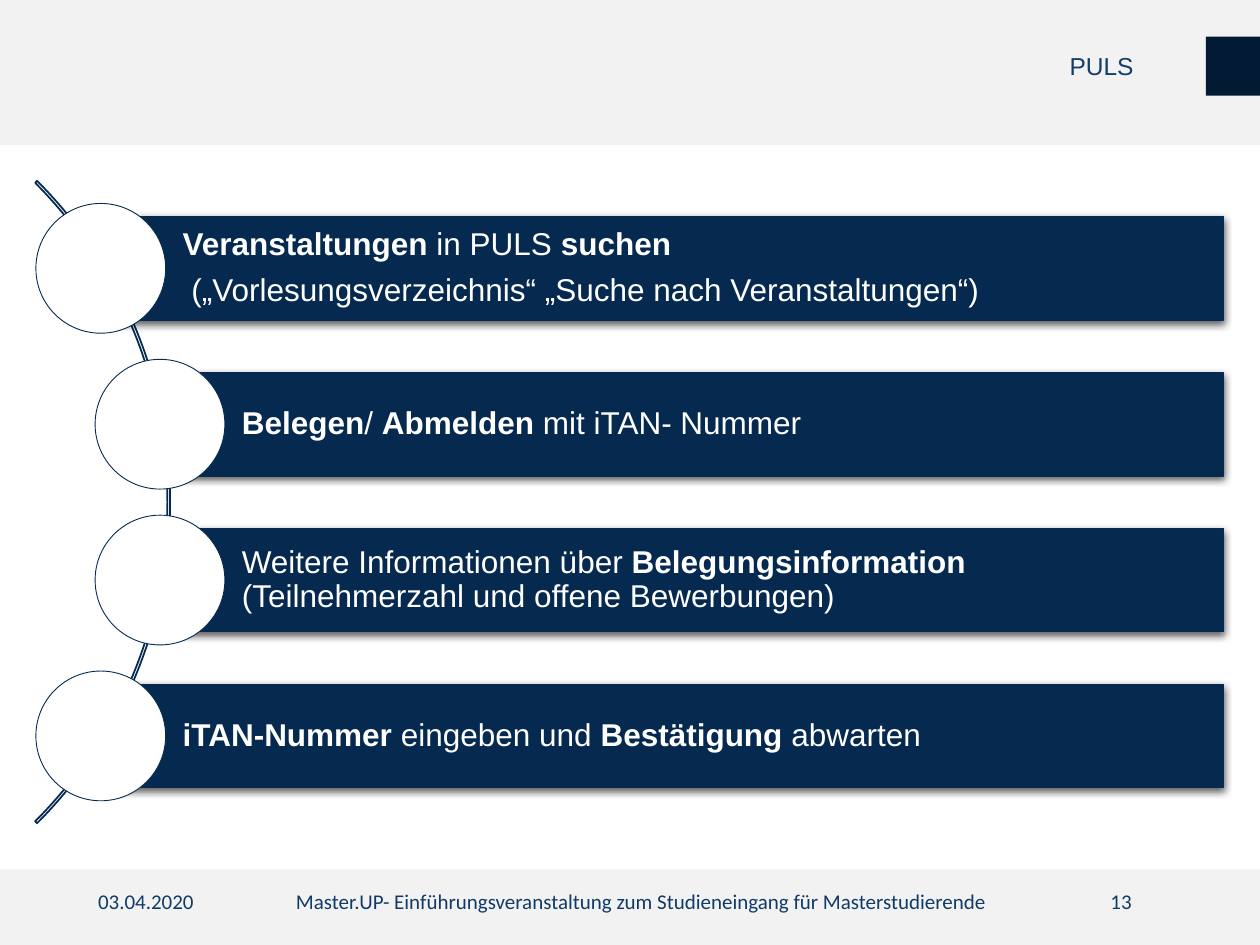
"""Builds the PULS slide: four enrolment steps strung along an arc."""
from lxml.etree import SubElement
from pptx import Presentation
from pptx.dml.color import RGBColor
from pptx.enum.shapes import MSO_SHAPE as Shape
from pptx.enum.text import MSO_ANCHOR as Anchor, PP_ALIGN as Align
from pptx.oxml.ns import qn
from pptx.util import Inches, Pt

COLORS = {
    "band": "F2F2F2", "navy": "05294F", "marker": "021A33", "white": "FFFFFF",
    "footer": "113B66", "title": "133E69", "shadow": "000000",
}
STEPS = [
    (0.8, [
        [("Veranstaltungen", True), (" in PULS ", False), ("suchen", True)],
        [(" („Vorlesungsverzeichnis“ „Suche nach Veranstaltungen“)", False)],
    ]),
    (1.27, [[("Belegen", True), ("/ ", False), ("Abmelden", True),
             (" mit iTAN- Nummer", False)]]),
    (1.27, [[("Weitere Informationen über ", False), ("Belegungsinformation ", True),
             ("\n", False), ("(Teilnehmerzahl und offene Bewerbungen)", False)]]),
    (0.8, [[("iTAN-Nummer", True), (" eingeben und ", False),
            ("Bestätigung", True), (" abwarten", False)]]),
]
FOOTER = [
    (0.68, 2.25, "03.04.2020", Align.LEFT),
    (2.25, 6.05, "Master.UP- Einführungsveranstaltung zum Studieneingang "
                 "für Masterstudierende", Align.LEFT),
    (6.83, 2.25, "13", Align.RIGHT),
]
BANDS = [(0, 1.15), (6.9, 0.6)]
FIRST_TOP, PITCH, BAR_HEIGHT, BAR_RIGHT, CIRCLE = 1.72, 1.237, 0.82, 9.71, 1.03


def color(name):
    return RGBColor.from_string(COLORS[name])


def add_figure(slide, preset, box, fill=None, line=None, width=0.75):
    figure = slide.shapes.add_shape(preset, *map(Inches, box))
    figure.shadow.inherit = False
    if fill:
        figure.fill.solid()
        figure.fill.fore_color.rgb = color(fill)
    else:
        figure.fill.background()
    if line:
        figure.line.color.rgb = color(line)
        figure.line.width = Pt(width)
    else:
        figure.line.fill.background()
    return figure


def cast_shadow(figure):
    effects = figure._element.spPr.find(qn("a:effectLst"))
    outer = SubElement(effects, qn("a:outerShdw"), blurRad=str(Pt(4.5)),
                       dist=str(Pt(1.5)), dir="5400000", algn="ctr", rotWithShape="0")
    tint = SubElement(outer, qn("a:srgbClr"), val=COLORS["shadow"])
    SubElement(tint, qn("a:alpha"), val="63000")


def write(shape, paragraphs, *, size, font, ink, align=Align.LEFT, anchor=Anchor.TOP,
          left_inset=0.1, inset=0.1, spacing=1.0, after=0):
    frame = shape.text_frame
    frame.word_wrap = True
    frame.vertical_anchor = anchor
    frame.margin_left, frame.margin_right = Inches(left_inset), Inches(inset)
    frame.margin_top = frame.margin_bottom = Inches(0.05)
    for index, runs in enumerate(paragraphs):
        paragraph = frame.add_paragraph() if index else frame.paragraphs[0]
        paragraph.alignment = align
        paragraph.line_spacing = spacing
        paragraph.space_after = Pt(after)
        for text, bold in runs:
            if text == "\n":
                paragraph.add_line_break()
                continue
            run = paragraph.add_run()
            run.text = text
            run.font.name, run.font.size, run.font.bold = font, Pt(size), bold
            run.font.color.rgb = color(ink)


def add_step(slide, index, left, paragraphs):
    top = FIRST_TOP + index * PITCH
    bar = add_figure(slide, Shape.RECTANGLE, (left, top, BAR_RIGHT - left, BAR_HEIGHT),
                     "navy", "navy")
    cast_shadow(bar)
    write(bar, paragraphs, size=18, font="Arial", ink="white", anchor=Anchor.MIDDLE,
          left_inset=0.65, inset=0.05, spacing=0.9, after=7.2)
    add_figure(slide, Shape.OVAL, (left - CIRCLE / 2, top + (BAR_HEIGHT - CIRCLE) / 2,
                                   CIRCLE, CIRCLE), "white", "navy", 0.5)


def main():
    deck = Presentation()
    deck.slide_width, deck.slide_height = Inches(10), Inches(7.5)
    slide = deck.slides.add_slide(deck.slide_layouts[6])

    for top, height in BANDS:
        add_figure(slide, Shape.RECTANGLE, (0, top, 10, height), "band")
    for left, width, text, align in FOOTER:
        note = slide.shapes.add_textbox(*map(Inches, (left, 7, width, 0.4)))
        write(note, [[(text, False)]], size=12, font="Calibri", ink="footer", align=align)

    arc = add_figure(slide, Shape.BLOCK_ARC, (-5.86, 0.38, 7.21, 7.21), line="navy", width=1)
    for index, value in enumerate((189, 27, 0.003)):
        arc.adjustments[index] = value
    for index, (left, paragraphs) in enumerate(STEPS):
        add_step(slide, index, left, paragraphs)

    title = slide.shapes.add_textbox(*map(Inches, (8.39, 0.17, 1.37, 0.74)))
    write(title, [[("PULS", False)]], size=14, font="Arial", ink="title",
          anchor=Anchor.MIDDLE, spacing=0.9)
    add_figure(slide, Shape.RECTANGLE, (9.57, 0.29, 0.43, 0.47), "marker")
    deck.save("out.pptx")


if __name__ == "__main__":
    main()
